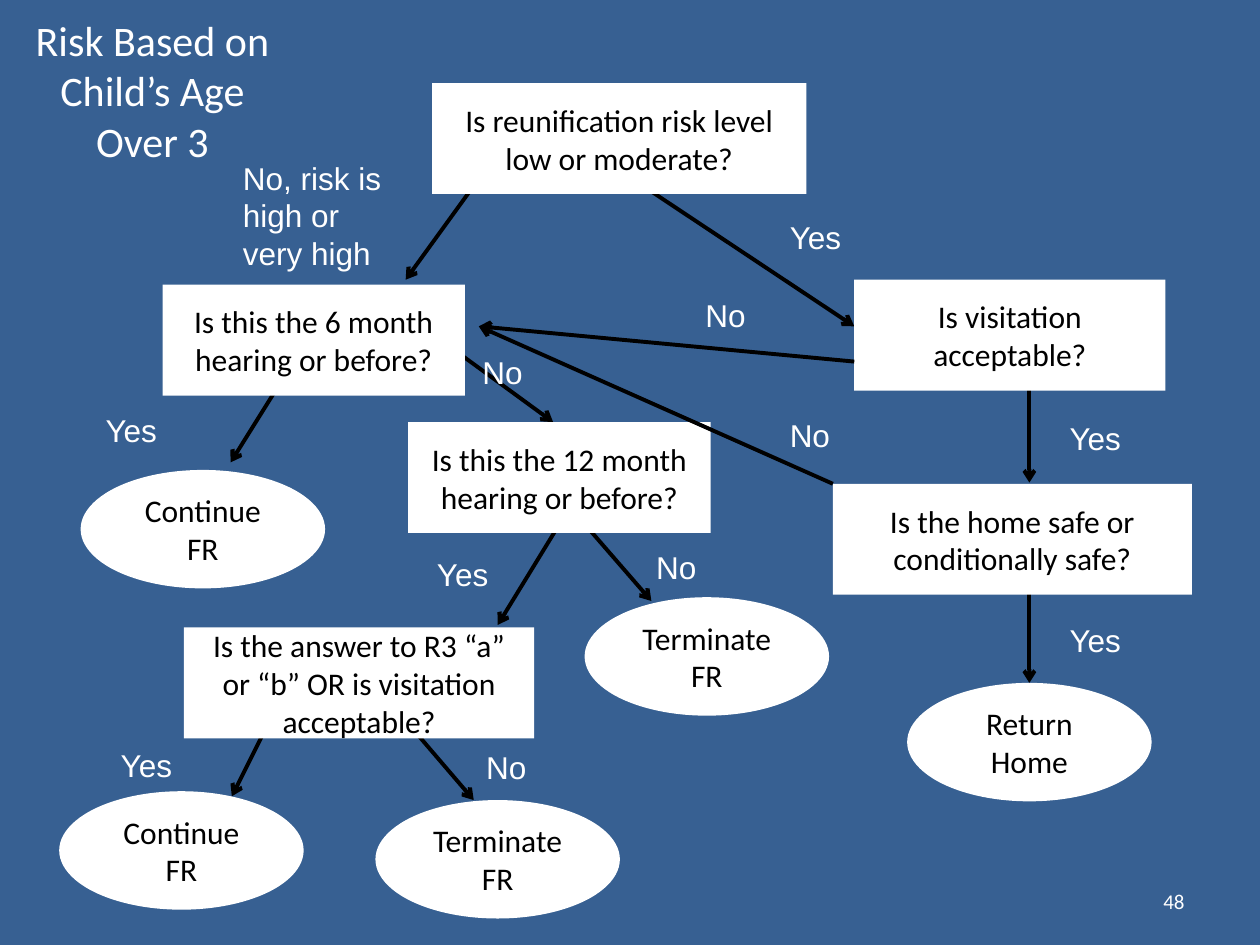
from lxml import etree
from pptx import Presentation
from pptx.dml.color import RGBColor
from pptx.enum.shapes import MSO_CONNECTOR, MSO_SHAPE
from pptx.enum.text import MSO_ANCHOR, MSO_AUTO_SIZE, PP_ALIGN
from pptx.oxml.ns import qn
from pptx.util import Inches, Pt

RECT, OVAL = MSO_SHAPE.RECTANGLE, MSO_SHAPE.OVAL
STRAIGHT = MSO_CONNECTOR.STRAIGHT
LEFT, CENTER, RIGHT = PP_ALIGN.LEFT, PP_ALIGN.CENTER, PP_ALIGN.RIGHT
TOP, MIDDLE = MSO_ANCHOR.TOP, MSO_ANCHOR.MIDDLE
COLORS = {"background": "376092", "box": "FFFFFF", "dark": "000000", "light": "FFFFFF"}
C = {name: RGBColor.from_string(value) for name, value in COLORS.items()}

prs = Presentation()
prs.slide_width, prs.slide_height = Inches(10), Inches(7.5)
COL, ROW = prs.slide_width / 100, prs.slide_height / 75  # grid of 100 columns, 75 rows
s = prs.slides.add_slide(prs.slide_layouts[5])
s.background.fill.solid()
s.background.fill.fore_color.rgb = C["background"]


def write(sp, lines, size, font, color, align, anchor):
    """Fill a shape with one paragraph, with a line break between lines."""
    tf = sp.text_frame
    tf.word_wrap = True
    tf.vertical_anchor = anchor
    p = tf.paragraphs[0]
    p.alignment = align
    for i, line in enumerate(lines):
        if i:
            p.add_line_break()
        r = p.add_run()
        r.text = line
        r.font.size, r.font.name = Pt(size), font
        r.font.color.rgb = C[color]


def add_arrow(x1, y1, x2, y2):
    line = s.shapes.add_connector(STRAIGHT, int(x1 * COL), int(y1 * ROW),
                                  int(x2 * COL), int(y2 * ROW))
    line.line.color.rgb = C["dark"]
    line.line.width = Pt(2.25)
    etree.SubElement(line.line._get_or_add_ln(), qn("a:tailEnd"), type="arrow")
    etree.SubElement(line._element.spPr, qn("a:effectLst"))


# Title and slide number
title = s.shapes.title
title.left, title.top = int(1.7 * COL), int(0.9 * ROW)
title.width, title.height = int(20.8 * COL), int(12.5 * ROW)
write(title, ["Risk Based on Child’s Age", "Over 3"], 24, "Calibri", "light", CENTER, MIDDLE)
number = s.shapes.add_textbox(int(71.7 * COL), int(69.5 * ROW), int(23.3 * COL), int(4 * ROW))
write(number, ["48"], 12, "Calibri", "light", RIGHT, MIDDLE)

# Arrows behind the boxes
for ends in [
    (40.9, 10.2, 32.2, 22.2), (51.7, 15.2, 67.8, 25.9),  # from risk level
    (23.3, 28.7, 18.3, 36.7), (33.9, 26.2, 43.9, 33.5),  # from 6 month hearing
    (44.4, 41.6, 39.5, 49.6), (43.8, 38.6, 51.7, 47.7),  # from 12 month hearing
    (21.6, 56.8, 18.4, 63.2), (29.8, 54.4, 37.6, 63.5),  # from R3 answer
    (81.7, 28.8, 81.7, 38.3), (81.7, 46.7, 81.7, 54.2),  # visitation, home safe
]:
    add_arrow(*ends)

# Questions are rectangles, outcomes are ovals
BOX_H, OVAL_W, OVAL_H = 8.8, 19.4, 9.4
questions = [
    (34.3, 6.6, 29.7, "Is reunification risk level low or moderate?"),
    (12.9, 22.6, 24, "Is this the 6 month hearing or before?"),
    (67.8, 22.2, 24.7, "Is visitation acceptable?"),
    (32.4, 33.5, 24, "Is this the 12 month hearing or before?"),
    (66.1, 38.4, 28.5, "Is the home safe or conditionally safe?"),
    (14.6, 49.8, 27.8, "Is the answer to R3 “a” or “b” OR is visitation acceptable?"),
]
outcomes = [
    (6.4, 37.3, "Continue FR"),
    (46.4, 47.4, "Terminate FR"),
    (72, 54.2, "Return Home"),
    (4.7, 62.8, "Continue FR"),
    (29.8, 63.5, "Terminate FR"),
]
nodes = [(RECT, x, y, w, BOX_H, text) for x, y, w, text in questions]
nodes += [(OVAL, x, y, OVAL_W, OVAL_H, text) for x, y, text in outcomes]
for kind, x, y, w, h, text in nodes:
    sp = s.shapes.add_shape(kind, int(x * COL), int(y * ROW), int(w * COL), int(h * ROW))
    sp.shadow.inherit = False
    sp.fill.solid()
    sp.fill.fore_color.rgb = C["box"]
    sp.line.fill.background()
    write(sp, [text], 18, "Calibri", "dark", CENTER, MIDDLE)

# Arrows back to the 6 month hearing, in front of the boxes
for x, y in [(66.1, 38.4), (67.8, 28.7)]:
    add_arrow(x, y, 38, 25.9)

# Answers beside the arrows
LABEL_W, LABEL_H = 8.7, 4
answers = {
    "Yes": [(61.7, 16.8), (83.9, 32.8), (83.9, 48.8), (7.4, 32.1), (33.7, 43.6), (8.6, 58.7)],
    "No": [(55, 23), (37.3, 27.5), (61.7, 32.5), (51.1, 43), (37.6, 58.9)],
}
labels = [(x, y, LABEL_W, LABEL_H, text) for text, spots in answers.items() for x, y in spots]
labels.append((18.3, 12.1, 13.3, 10.1, "No, risk is high or very high"))
for x, y, w, h, text in labels:
    sp = s.shapes.add_textbox(int(x * COL), int(y * ROW), int(w * COL), int(h * ROW))
    write(sp, [text], 18, "Arial", "light", LEFT, TOP)
    sp.text_frame.auto_size = MSO_AUTO_SIZE.SHAPE_TO_FIT_TEXT

prs.save("out.pptx")
